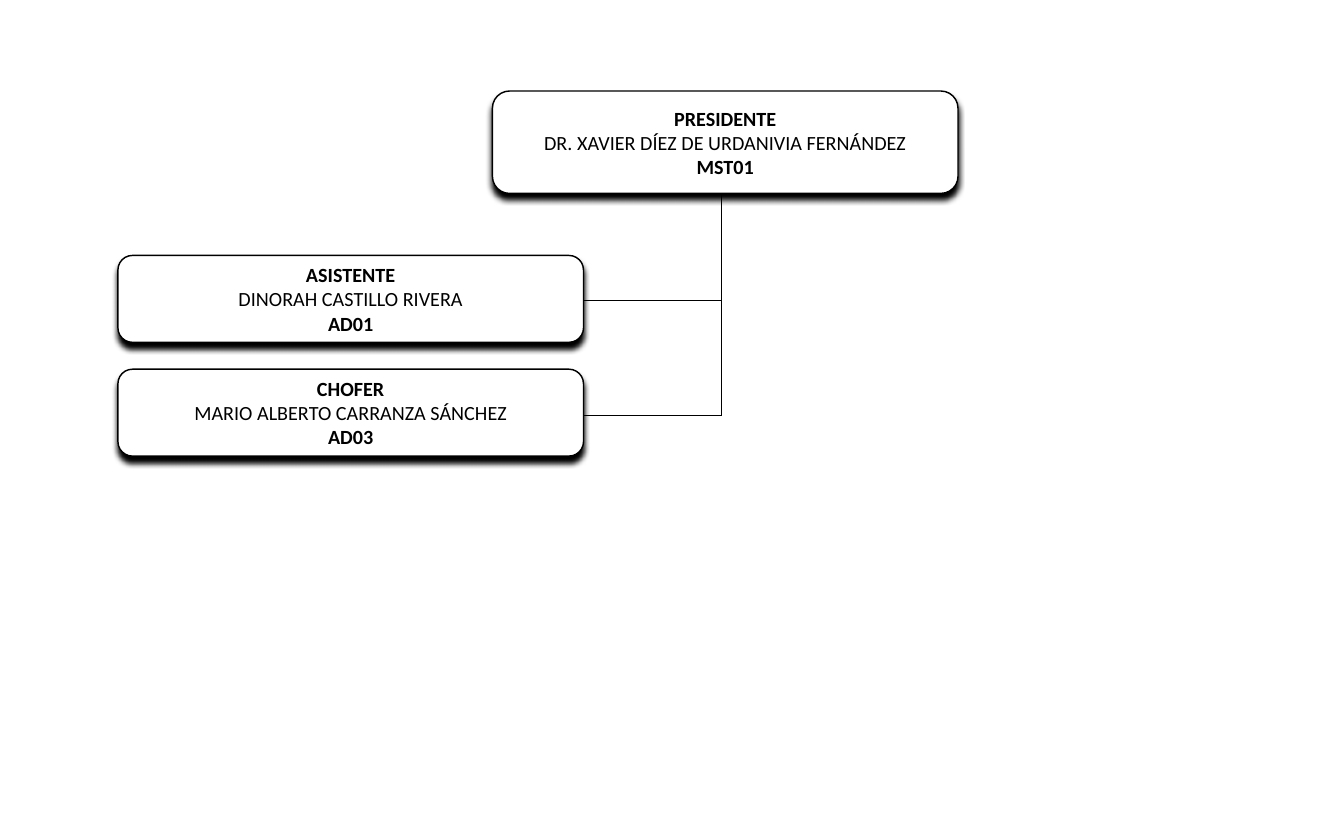
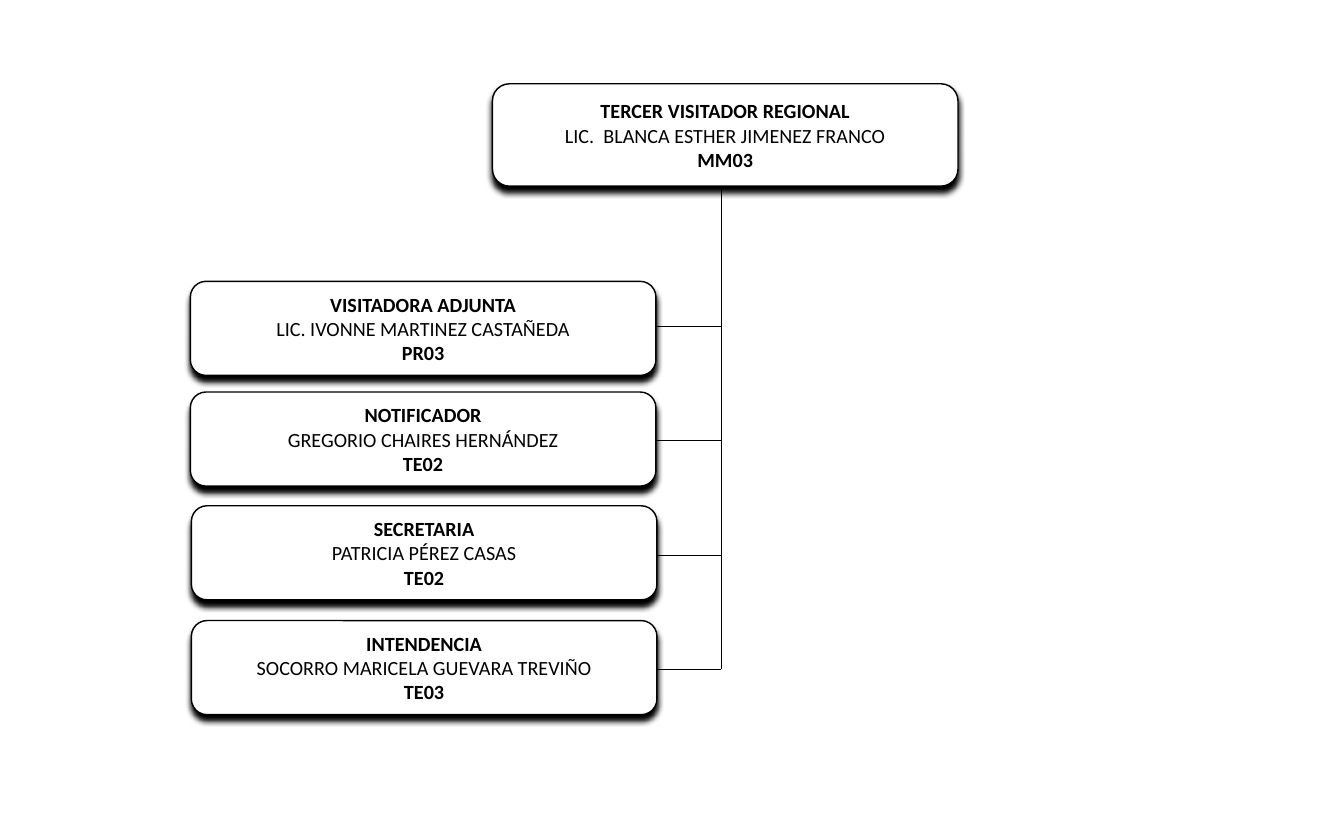
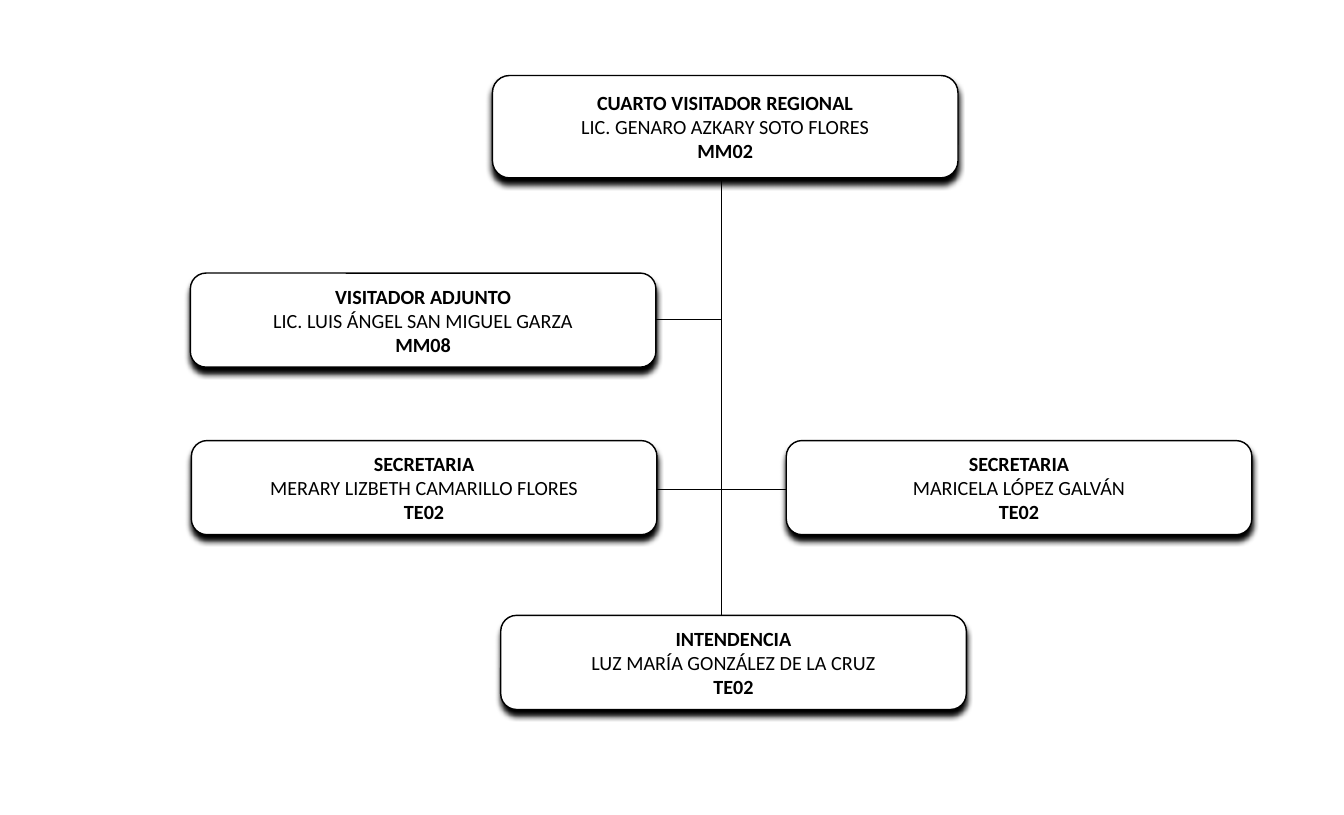
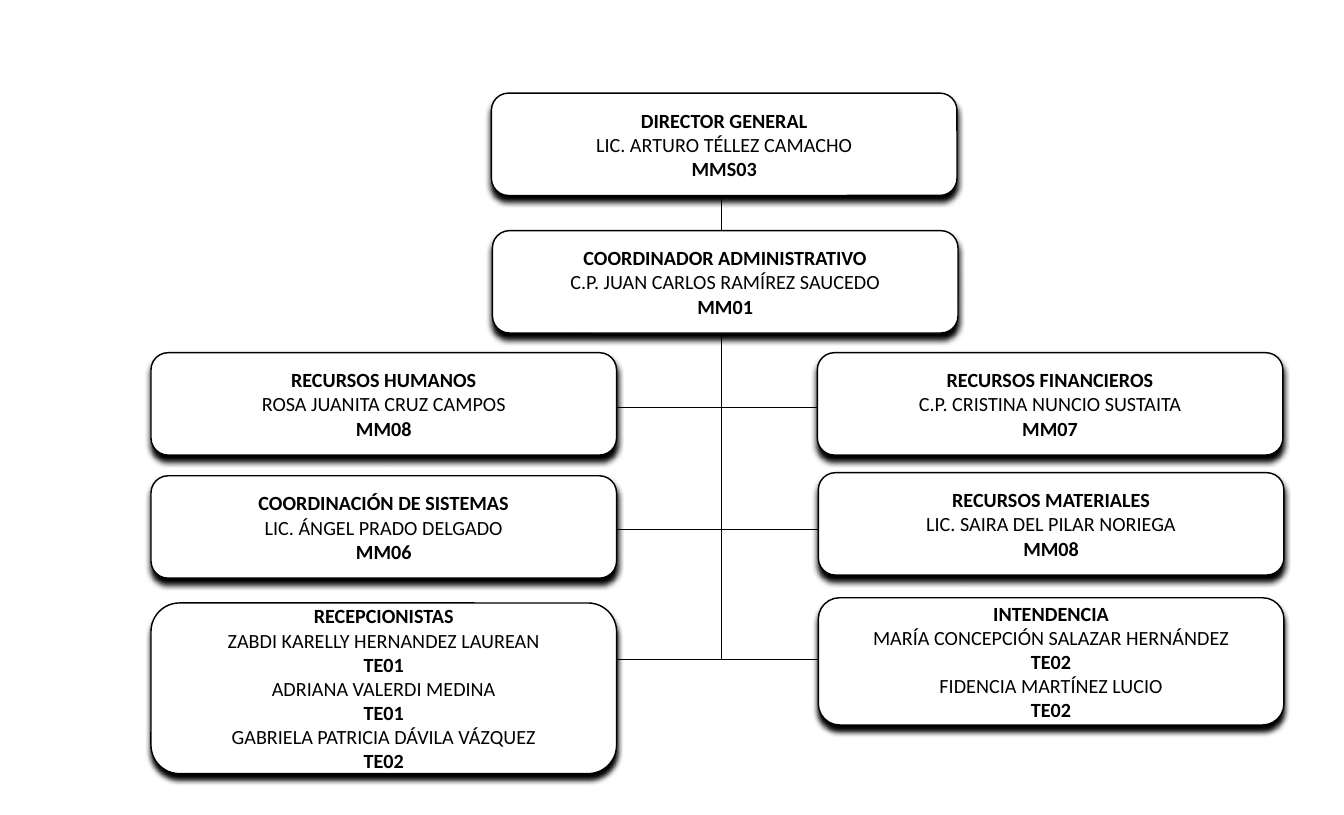
"""Build the organisation charts, one unit per slide."""
from dataclasses import dataclass

import lxml.etree
import pptx
import pptx.dml.color
import pptx.enum.shapes
import pptx.enum.text
import pptx.oxml.ns
import pptx.presentation
import pptx.slide
import pptx.util

Inches = pptx.util.Inches
Pt = pptx.util.Pt
qn = pptx.oxml.ns.qn


@dataclass(frozen=True)
class Theme:
    ink: str = "000000"
    paper: str = "FFFFFF"
    font: str = "Calibri"
    text_size: float = 14
    border: float = 1
    link: float = 0.75
    shadow: float = 4
    corner: float = 0.167
    inset_x: float = 0.17
    inset_y: float = 0.09


@dataclass(frozen=True)
class Post:
    left: float
    top: float
    height: float
    lines: tuple[str, ...]


@dataclass(frozen=True)
class Link:
    x1: float
    y1: float
    x2: float
    y2: float


@dataclass(frozen=True)
class Unit:
    links: tuple[Link, ...]
    posts: tuple[Post, ...]


THEME = Theme()
SLIDE_WIDTH, SLIDE_HEIGHT = 12.99, 7.88
POST_WIDTH = 4.5
HEAD_LEFT, HEAD_HEIGHT = 4.76, 0.99
AIDE_HEIGHT, STAFF_HEIGHT = 0.84, 0.91
TRUNK_X = 6.97
SPAN_LEFT, SPAN_RIGHT = 5.79, 8.09


def trunk(top: float, bottom: float) -> Link:
    return Link(TRUNK_X, top, TRUNK_X, bottom)


def branch(y: float, left: float = SPAN_LEFT, right: float = TRUNK_X) -> Link:
    return Link(left, y, right, y)


def head(top: float, *lines: str, left: float = HEAD_LEFT) -> Post:
    return Post(left, top, HEAD_HEIGHT, lines)


def aide(top: float, *lines: str) -> Post:
    return Post(1.14, top, AIDE_HEIGHT, lines)


def staff(left: float, top: float, *lines: str) -> Post:
    return Post(left, top, STAFF_HEIGHT, lines)


UNITS = (
    Unit(
        (trunk(1.89, 4.02), branch(2.91, 4.67), branch(4.02, 4.67)),
        (
            head(0.88, "PRESIDENTE", "DR. XAVIER DÍEZ DE URDANIVIA FERNÁNDEZ", "MST01"),
            aide(2.47, "ASISTENTE", "DINORAH CASTILLO RIVERA", "AD01"),
            aide(3.57, "CHOFER", "MARIO ALBERTO CARRANZA SÁNCHEZ", "AD03"),
        ),
    ),
    Unit(
        (trunk(1.82, 6.47), branch(3.16, 5.87), branch(4.26, 5.87), branch(5.37), branch(6.47)),
        (
            head(0.81, "TERCER VISITADOR REGIONAL", "LIC.  BLANCA ESTHER JIMENEZ FRANCO", "MM03"),
            staff(1.84, 2.72, "VISITADORA ADJUNTA", "LIC. IVONNE MARTINEZ CASTAÑEDA", "PR03"),
            staff(1.84, 3.79, "NOTIFICADOR", "GREGORIO CHAIRES HERNÁNDEZ", "TE02"),
            staff(1.85, 4.89, "SECRETARIA", "PATRICIA PÉREZ CASAS", "TE02"),
            staff(1.85, 6, "INTENDENCIA", "SOCORRO MARICELA GUEVARA TREVIÑO", "TE03"),
        ),
    ),
    Unit(
        (trunk(1.75, 6.23), branch(3.09, 5.87), branch(4.73, right=SPAN_RIGHT)),
        (
            head(0.73, "CUARTO VISITADOR REGIONAL", "LIC. GENARO AZKARY SOTO FLORES", "MM02"),
            staff(1.84, 2.64, "VISITADOR ADJUNTO", "LIC. LUIS ÁNGEL SAN MIGUEL GARZA", "MM08"),
            staff(1.85, 4.26, "SECRETARIA", "MERARY LIZBETH CAMARILLO FLORES", "TE02"),
            staff(7.6, 4.26, "SECRETARIA", "MARICELA LÓPEZ GALVÁN", "TE02"),
            staff(4.84, 5.95, "INTENDENCIA", "LUZ MARÍA GONZÁLEZ DE LA CRUZ", "TE02"),
        ),
    ),
    Unit(
        (trunk(1.89, 3.1), trunk(2.99, 6.38))
        + tuple(branch(y, right=SPAN_RIGHT) for y in (3.94, 5.12, 6.38)),
        (
            head(0.9, "DIRECTOR GENERAL", "LIC. ARTURO TÉLLEZ CAMACHO", "MMS03", left=4.75),
            head(2.23, "COORDINADOR ADMINISTRATIVO", "C.P. JUAN CARLOS RAMÍREZ SAUCEDO", "MM01"),
            head(3.41, "RECURSOS HUMANOS", "ROSA JUANITA CRUZ CAMPOS", "MM08", left=1.46),
            head(3.41, "RECURSOS FINANCIEROS", "C.P. CRISTINA NUNCIO SUSTAITA", "MM07", left=7.9),
            head(4.6, "COORDINACIÓN DE SISTEMAS", "LIC. ÁNGEL PRADO DELGADO", "MM06", left=1.46),
            head(4.57, "RECURSOS MATERIALES", "LIC. SAIRA DEL PILAR NORIEGA", "MM08", left=7.91),
            Post(7.91, 5.78, 1.23, (
                "INTENDENCIA",
                "MARÍA CONCEPCIÓN SALAZAR HERNÁNDEZ", "TE02",
                "FIDENCIA MARTÍNEZ LUCIO", "TE02",
            )),
            Post(1.46, 5.83, 1.65, (
                "RECEPCIONISTAS",
                "ZABDI KARELLY HERNANDEZ LAUREAN", "TE01",
                "ADRIANA VALERDI MEDINA", "TE01",
                "GABRIELA PATRICIA DÁVILA VÁZQUEZ", "TE02",
            )),
        ),
    ),
)


def rgb(value: str) -> pptx.dml.color.RGBColor:
    return pptx.dml.color.RGBColor.from_string(value)


def draw_link(slide: pptx.slide.Slide, link: Link) -> None:
    connector = slide.shapes.add_connector(
        pptx.enum.shapes.MSO_CONNECTOR.STRAIGHT,
        Inches(link.x1), Inches(link.y1), Inches(link.x2), Inches(link.y2),
    )
    connector.line.color.rgb = rgb(THEME.ink)
    connector.line.width = Pt(THEME.link)
    lxml.etree.SubElement(connector._element.spPr, qn("a:effectLst"))


def write_lines(frame, lines: tuple[str, ...]) -> None:
    frame.word_wrap = False
    frame.vertical_anchor = pptx.enum.text.MSO_ANCHOR.MIDDLE
    frame.margin_left = frame.margin_right = Inches(THEME.inset_x)
    frame.margin_top = frame.margin_bottom = Inches(THEME.inset_y)
    frame.text = "\n".join(lines)
    for index, paragraph in enumerate(frame.paragraphs):
        paragraph.alignment = pptx.enum.text.PP_ALIGN.CENTER
        paragraph.font.name = THEME.font
        paragraph.font.size = Pt(THEME.text_size)
        paragraph.font.color.rgb = rgb(THEME.ink)
        paragraph.font.bold = index % 2 == 0


def drop_shadow(shape) -> None:
    shape.shadow.inherit = False
    effects = shape._element.spPr.find(qn("a:effectLst"))
    reach = str(Pt(THEME.shadow))
    outer = lxml.etree.SubElement(
        effects, qn("a:outerShdw"), blurRad=reach, dist=reach, dir="5400000", rotWithShape="0"
    )
    lxml.etree.SubElement(outer, qn("a:srgbClr"), val=THEME.ink)


def draw_post(slide: pptx.slide.Slide, post: Post) -> None:
    card = slide.shapes.add_shape(
        pptx.enum.shapes.MSO_SHAPE.ROUNDED_RECTANGLE,
        Inches(post.left), Inches(post.top), Inches(POST_WIDTH), Inches(post.height),
    )
    card.adjustments[0] = THEME.corner
    card.fill.solid()
    card.fill.fore_color.rgb = rgb(THEME.paper)
    card.line.color.rgb = rgb(THEME.ink)
    card.line.width = Pt(THEME.border)
    drop_shadow(card)
    write_lines(card.text_frame, post.lines)


def draw_unit(deck: pptx.presentation.Presentation, unit: Unit) -> None:
    slide = deck.slides.add_slide(deck.slide_layouts.get_by_name("Blank"))
    for link in unit.links:
        draw_link(slide, link)
    for post in unit.posts:
        draw_post(slide, post)


def main() -> None:
    deck = pptx.Presentation()
    deck.slide_width = Inches(SLIDE_WIDTH)
    deck.slide_height = Inches(SLIDE_HEIGHT)
    for unit in UNITS:
        draw_unit(deck, unit)
    deck.save("out.pptx")


if __name__ == "__main__":
    main()
